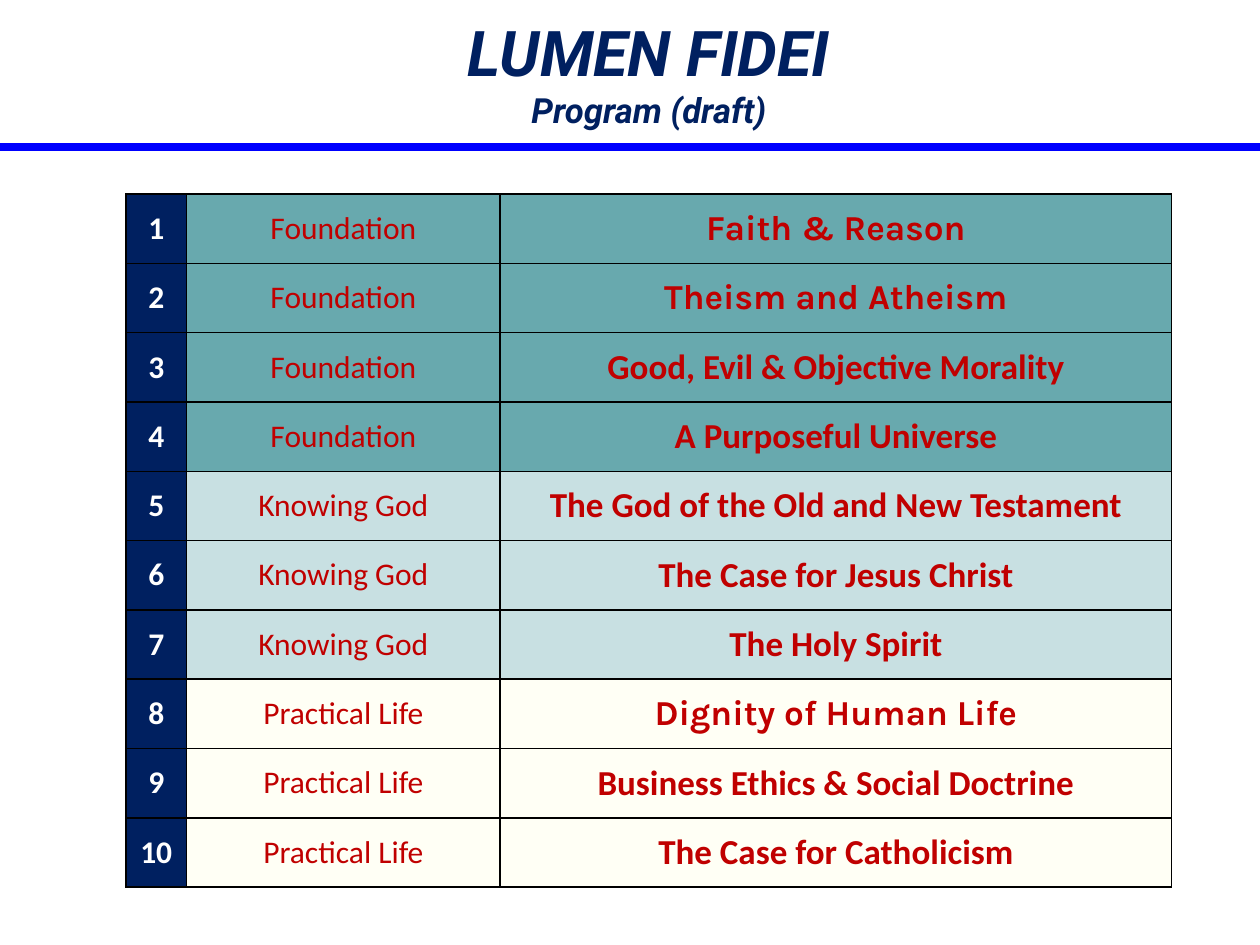
from lxml import etree
from pptx import Presentation
from pptx import util as u
from pptx.dml.color import RGBColor
from pptx.enum import shapes, text
from pptx.oxml import ns

NAVY = RGBColor(0x00, 0x20, 0x60)
BLUE = RGBColor(0x00, 0x00, 0xFF)
RED = RGBColor(0xC0, 0x00, 0x00)
WHITE = RGBColor(0xFF, 0xFF, 0xFF)
BLACK = RGBColor(0x00, 0x00, 0x00)
TEAL = RGBColor(0x68, 0xA9, 0xAE)
PALE = RGBColor(0xC8, 0xE0, 0xE2)
CREAM = RGBColor(0xFF, 0xFF, 0xF5)

PARTS = [
    ("Foundation", TEAL, [
        ("Faith & Reason", "Karla"),
        ("Theism and Atheism", "Karla"),
        ("Good, Evil & Objective Morality", "Calibri"),
        ("A Purposeful Universe", "Calibri"),
    ]),
    ("Knowing God", PALE, [
        ("The God of the Old and New Testament", "Calibri"),
        ("The Case for Jesus Christ", "Calibri"),
        ("The Holy Spirit", "Calibri"),
    ]),
    ("Practical Life", CREAM, [
        ("Dignity of Human Life", "Karla"),
        ("Business Ethics & Social Doctrine", "Calibri"),
        ("The Case for Catholicism", "Calibri"),
    ]),
]


def px(n):
    """Turn px, a hundred to the inch, into EMU."""
    return u.Emu(n * 9144)


def write(para, words, size=18, font="Calibri", color=RED, bold=True, italic=False):
    """Add a centred run of text to a paragraph."""
    para.alignment = text.PP_ALIGN.CENTER
    run = para.add_run()
    run.text = words
    face = run.font
    face.size, face.name = u.Pt(size), font
    face.bold, face.italic = bold, italic
    face.color.rgb = color


class Deck:
    """Hold the style and the current slide."""

    def __init__(self, edge=BLACK):
        """Start a deck with one title slide."""
        self.edge = edge
        self.prs = Presentation()
        self.prs.slide_width, self.prs.slide_height = px(1000), px(750)
        self.slide = self.prs.slides.add_slide(self.prs.slide_layouts[5])

    def rule(self, x1, y1, x2, y2, color, width):
        """Draw a straight line."""
        line = self.slide.shapes.add_connector(
            shapes.MSO_CONNECTOR.STRAIGHT, px(x1), px(y1), px(x2), px(y2))
        line.line.color.rgb = color
        line.line.width = u.Pt(width)
        etree.SubElement(line._element.spPr, ns.qn("a:effectLst"))

    def title(self, x, y, w, h, head, sub):
        """Fill the title placeholder with a head and a smaller line."""
        box = self.slide.shapes.title
        box.left, box.top, box.width, box.height = map(px, (x, y, w, h))
        frame = box.text_frame
        frame.auto_size = text.MSO_AUTO_SIZE.NONE
        frame.vertical_anchor = text.MSO_ANCHOR.MIDDLE
        para = frame.paragraphs[0]
        style = dict(font="Roboto", color=NAVY, italic=True)
        write(para, head, size=36, **style)
        para.add_line_break()
        write(para, sub, size=19.8, **style)

    def cell(self, cell, words, fill, **style):
        """Border, fill and write one table cell."""
        props = cell._tc.get_or_add_tcPr()
        for side in "LRTB":
            line = etree.SubElement(props, ns.qn(f"a:ln{side}"), w=str(u.Pt(1)))
            solid = etree.SubElement(line, ns.qn("a:solidFill"))
            etree.SubElement(solid, ns.qn("a:srgbClr"), val=str(self.edge))
        cell.fill.solid()
        cell.fill.fore_color.rgb = fill
        cell.vertical_anchor = text.MSO_ANCHOR.MIDDLE
        write(cell.text_frame.paragraphs[0], words, **style)

    def table(self, x, y, cols, high, parts):
        """Lay out the numbered sessions, tinted by part."""
        rows = [(part, tint, *talk) for part, tint, talks in parts for talk in talks]
        grid = self.slide.shapes.add_table(
            len(rows), len(cols), px(x), px(y), px(sum(cols)), px(high * len(rows))).table
        grid.first_row = grid.horz_banding = False
        for col, wide in zip(grid.columns, cols):
            col.width = px(wide)
        for i, (part, tint, talk, font) in enumerate(rows):
            grid.rows[i].height = px(high)
            self.cell(grid.cell(i, 0), str(i + 1), NAVY, color=WHITE)
            self.cell(grid.cell(i, 1), part, tint, bold=False)
            self.cell(grid.cell(i, 2), talk, tint, size=20, font=font)


def main():
    """Build and save the program slide."""
    deck = Deck()
    deck.rule(0, 117, 1000, 117, BLUE, 4.5)
    deck.title(100, 19, 830, 76, "LUMEN FIDEI", "Program (draft)")
    deck.table(100, 154, (48, 249, 533), 55, PARTS)
    deck.prs.save("out.pptx")


if __name__ == "__main__":
    main()
